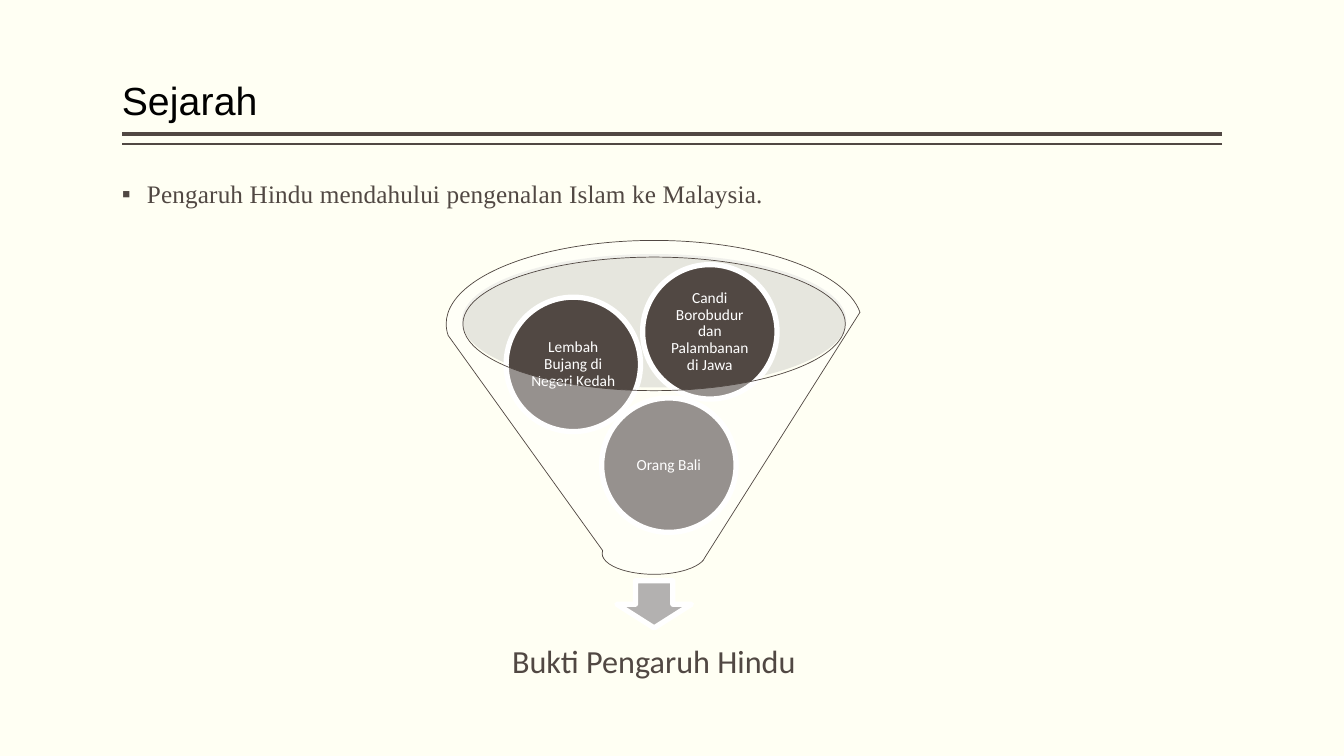
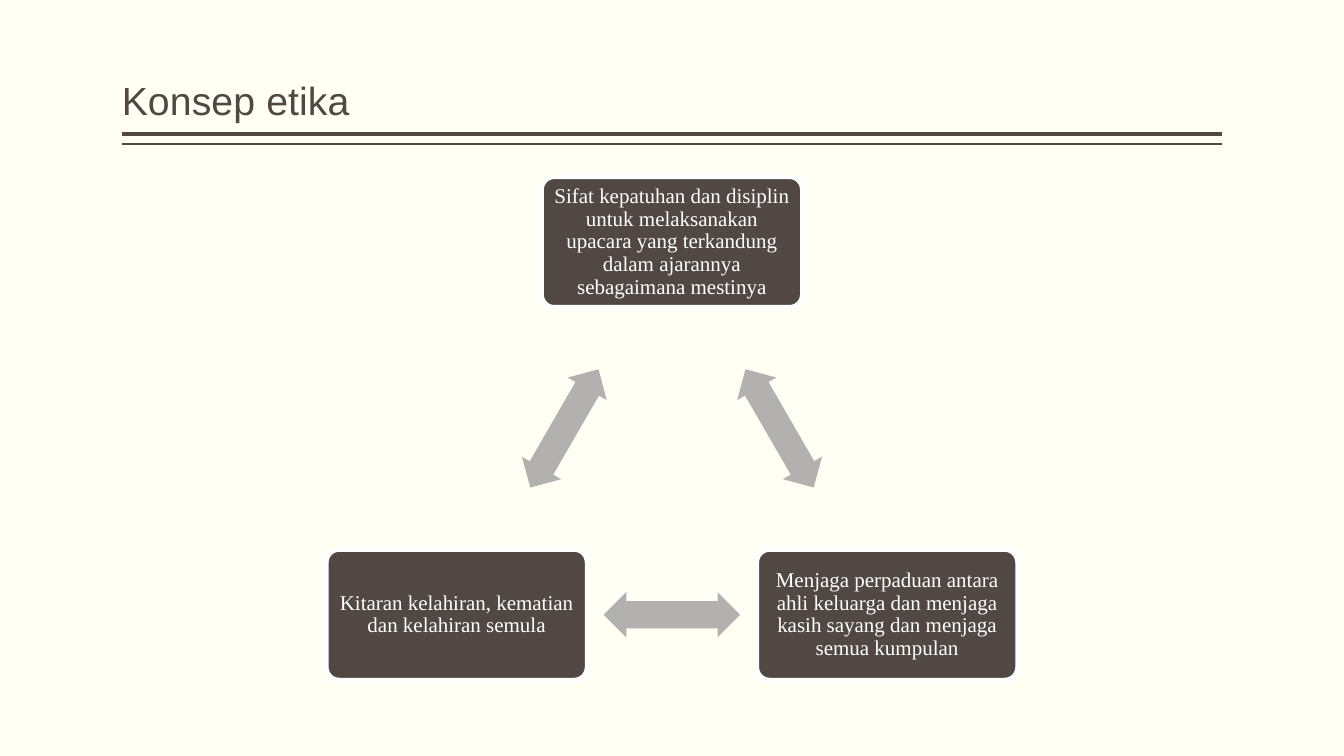
from collections import namedtuple

from lxml.etree import SubElement
from pptx import Presentation
from pptx.dml.color import RGBColor
from pptx.enum.shapes import MSO_CONNECTOR as CONNECTOR, MSO_SHAPE as SHAPE
from pptx.enum.text import MSO_ANCHOR as ANCHOR, MSO_AUTO_SIZE as AUTO_SIZE, PP_ALIGN as ALIGN
from pptx.oxml.ns import qn
from pptx.util import Emu, Pt

Box = namedtuple("Box", "left top width height")

EMU_PER_PX = 9525
TITLE = Box(116, 8, 1048, 115)
BODY = Box(116, 168, 1048, 480)
RULES = [(128, 3), (137, 1)]

PAPER = "FFFFF3"
BROWN = "514843"
GREY = "B3B1B0"
PALE = "C2C1C0"
WHITE = "FFFFFF"
BLACK = "000000"

HEADING_FONT = "Arial"
BODY_FONT = "Times New Roman"
DIAGRAM_FONT = "Calibri"
OUTLINE = 3.78


def px(length):
    return Emu(round(length * EMU_PER_PX))


def paint(color_format, value):
    color_format.rgb = RGBColor.from_string(value)


def fill_solid(fill, value):
    fill.solid()
    paint(fill.fore_color, value)


def set_text(shape, text, font, size, color, align=ALIGN.LEFT, anchor=ANCHOR.MIDDLE, insets=(0, 5)):
    frame = shape.text_frame
    frame.text = text
    frame.word_wrap = True
    frame.auto_size = AUTO_SIZE.NONE
    frame.vertical_anchor = anchor
    frame.margin_left = frame.margin_right = px(insets[0])
    frame.margin_top = frame.margin_bottom = px(insets[1])
    paragraph = frame.paragraphs[0]
    paragraph.alignment = align
    paragraph.line_spacing = 0.9
    run = paragraph.runs[0]
    run.font.name = font
    run.font.size = Pt(size)
    paint(run.font.color, color)
    return paragraph


def space_letters(shape):
    for properties in shape.element.iter(qn("a:rPr")):
        properties.set("spc", "10")


def move(shape, box):
    shape.left, shape.top, shape.width, shape.height = map(px, box)


def add_figure(slide, kind, box, fill, line=None, line_width=OUTLINE, opacity=None, adjustments=()):
    figure = slide.shapes.add_shape(kind, *map(px, box))
    figure.shadow.inherit = False
    fill_solid(figure.fill, fill)
    if opacity is not None:
        color = figure.element.spPr.find(qn("a:solidFill"))[0]
        SubElement(color, qn("a:alpha")).set("val", str(opacity * 1000))
    if line:
        paint(figure.line.color, line)
        figure.line.width = Pt(line_width)
    else:
        figure.line.fill.background()
    for index, value in enumerate(adjustments):
        figure.adjustments[index] = value
    return figure


def style_master(master, slide):
    fill_solid(master.background.fill, PAPER)
    for number, (y, width) in enumerate(RULES):
        rule = slide.shapes.add_connector(
            CONNECTOR.STRAIGHT, px(TITLE.left + TITLE.width), px(y), px(TITLE.left), px(y)
        )
        paint(rule.line.color, BROWN)
        rule.line.width = Pt(width)
        SubElement(rule.element.spPr, qn("a:effectLst"))
        next(rule.element.iter(qn("p:cNvPr"))).set("id", str(100 + number))
        master.shapes.element.append(rule.element)


def add_title(slide, text, color):
    title = slide.shapes.title
    move(title, TITLE)
    set_text(title, text, HEADING_FONT, 28, color, anchor=ANCHOR.BOTTOM)
    space_letters(title)


def add_bullet(slide, text, box):
    body = slide.placeholders[1]
    move(body, box)
    paragraph = set_text(body, text, BODY_FONT, 18, BROWN, anchor=ANCHOR.TOP)
    paragraph.space_before = Pt(18)
    space_letters(body)
    for properties in body.element.iter(qn("a:pPr")):
        properties.set("marL", str(px(24)))
        properties.set("indent", str(px(-24)))
        SubElement(properties, qn("a:buChar")).set("char", "▪")


def add_funnel(slide, box, balls, result):
    axis = box.left + 507

    def centered(top, width, height):
        return Box(axis - width / 2, box.top + top, width, height)

    add_figure(slide, SHAPE.OVAL, centered(74, 366, 127), PALE, opacity=40)
    add_figure(slide, SHAPE.DOWN_ARROW, centered(385, 71, 45), GREY, WHITE)
    caption = slide.shapes.add_textbox(*map(px, centered(421, 340, 85)))
    set_text(caption, result, DIAGRAM_FONT, 23, BROWN, ALIGN.CENTER, insets=(17, 17))
    diameter = 128
    for text, left, top in balls:
        place = Box(box.left + left, box.top + top, diameter, diameter)
        ball = add_figure(slide, SHAPE.OVAL, place, BROWN, WHITE)
        set_text(ball, text, DIAGRAM_FONT, 11, WHITE, ALIGN.CENTER, insets=(2, 2))
    add_figure(slide, SHAPE.FUNNEL, centered(61, 396, 318), WHITE, BROWN, 0.5, opacity=40)


def add_cycle(slide, box, concepts):
    width, height = 249, 125
    arrow_width, arrow_height = 130, 43
    spread = 205
    middle = box.left + box.width / 2
    upper = box.top + height / 2
    lower = box.top + box.height - height / 2
    centers = [(middle, upper), (middle + spread, lower), (middle - spread, lower)]
    for index, (text, (x, y)) in enumerate(zip(concepts, centers)):
        place = Box(x - width / 2, y - height / 2, width, height)
        card = add_figure(slide, SHAPE.ROUNDED_RECTANGLE, place, BROWN, WHITE, adjustments=[0.1])
        set_text(card, text, BODY_FONT, 15, WHITE, ALIGN.CENTER, insets=(6, 6))
        next_x, next_y = centers[(index + 1) % len(centers)]
        place = Box(
            (x + next_x - arrow_width) / 2, (y + next_y - arrow_height) / 2, arrow_width, arrow_height
        )
        arrow = add_figure(slide, SHAPE.LEFT_RIGHT_ARROW, place, GREY, adjustments=[0.6, 0.5])
        arrow.rotation = 60 + 120 * index


def build_history(slide):
    add_title(slide, "Sejarah", BLACK)
    add_bullet(slide, "Pengaruh Hindu mendahului pengenalan Islam ke Malaysia.", BODY)
    evidence = [
        ("Orang Bali", 457, 211),
        ("Lembah Bujang di Negeri Kedah", 366, 115),
        ("Candi Borobudur dan Palambanan di Jawa", 496, 84),
    ]
    add_funnel(slide, BODY, evidence, "Bukti Pengaruh Hindu")


def build_ethics(slide):
    add_title(slide, "Konsep etika", BROWN)
    concepts = [
        "Sifat kepatuhan dan disiplin untuk melaksanakan upacara yang terkandung "
        "dalam ajarannya sebagaimana mestinya",
        "Menjaga perpaduan antara ahli keluarga dan menjaga kasih sayang dan menjaga semua kumpulan",
        "Kitaran kelahiran, kematian dan kelahiran semula",
    ]
    add_cycle(slide, BODY, concepts)


def main():
    deck = Presentation()
    deck.slide_width, deck.slide_height = px(1280), px(720)
    history = deck.slides.add_slide(deck.slide_layouts[1])
    ethics = deck.slides.add_slide(deck.slide_layouts[5])
    style_master(deck.slide_master, history)
    build_history(history)
    build_ethics(ethics)
    deck.save("out.pptx")


if __name__ == "__main__":
    main()
